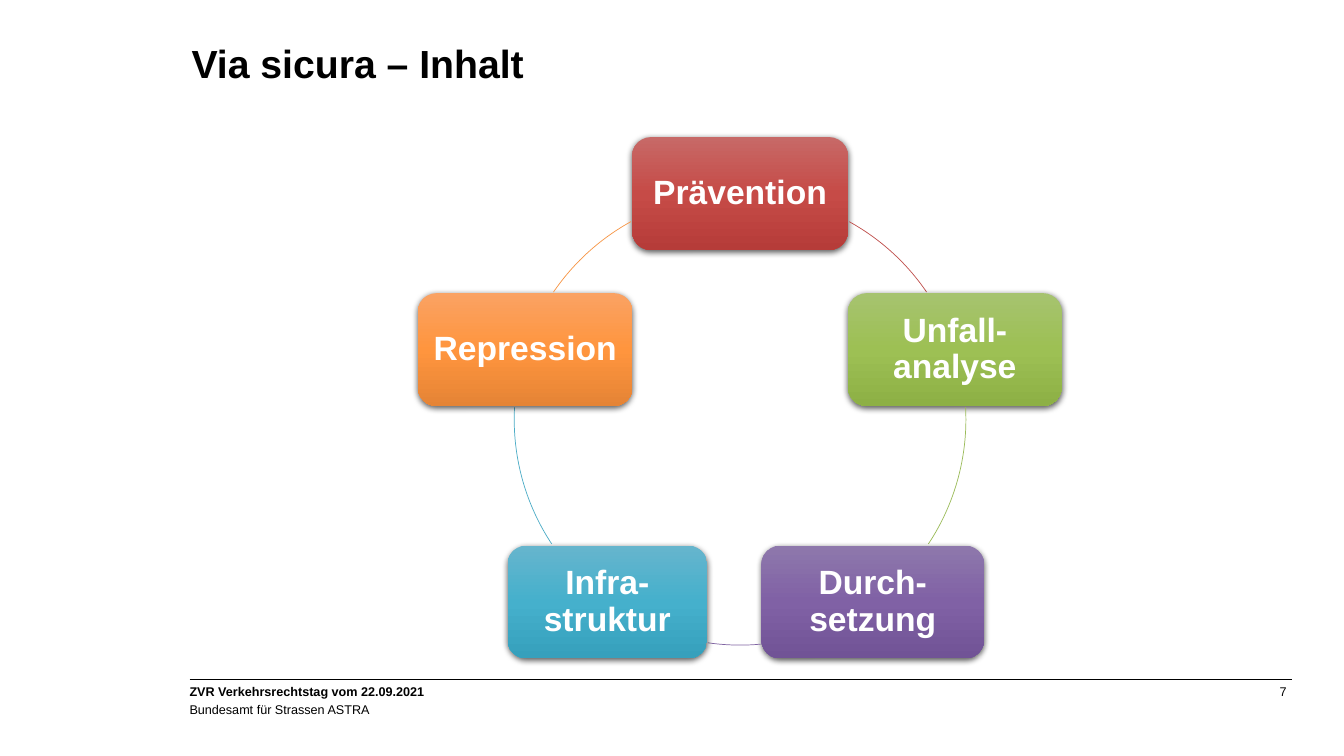
from math import cos, radians, sin

from lxml import etree
from pptx import Presentation
from pptx.dml.color import RGBColor
from pptx.enum.shapes import MSO_CONNECTOR, MSO_SHAPE
from pptx.enum.text import MSO_ANCHOR, PP_ALIGN
from pptx.oxml.ns import qn
from pptx.util import Inches, Pt

ROUNDED, ARC = MSO_SHAPE.ROUNDED_RECTANGLE, MSO_SHAPE.ARC
STRAIGHT = MSO_CONNECTOR.STRAIGHT
TOP, MIDDLE = MSO_ANCHOR.TOP, MSO_ANCHOR.MIDDLE
LEFT, CENTER, RIGHT = PP_ALIGN.LEFT, PP_ALIGN.CENTER, PP_ALIGN.RIGHT

COLORS = {"text": "000000", "label": "FFFFFF", "shadow": "000000"}
FONT = "Arial"

# Ring: centre, radius and height of the boxes, in inches
CENTER_X, CENTER_Y, RADIUS = 7.34, 4.16, 2.24
BOX_HEIGHT = 1.12

# Label, box width, gradient, arc colour, arc start and end (degrees clockwise from the top)
TOPICS = [
    ("Prävention", 2.14, ("C76967", "C64B47", "B63C39"), "C0504D", 28.9, 55.7),
    ("Unfall-analyse", 2.12, ("A6C36F", "9DC054", "8DB045"), "9BBB59", 87, 123.5),
    ("Durch-setzung", 2.21, ("8E78AC", "8061A5", "715396"), "8064A2", 174.8, 188.2),
    ("Infra-struktur", 1.98, ("66B5CD", "45B0CC", "36A0BC"), "4BACC6", 236.5, 273),
    ("Repression", 2.13, ("FAA263", "FF953E", "E58435"), "F79646", 304.3, 331.1),
]


class SlideBuilder:
    def __init__(self, slide, font, colors):
        self.slide = slide
        self.font = font
        self.colors = colors

    def set_text(self, shape, text, size, color, bold, align, anchor, insets):
        frame = shape.text_frame
        frame.word_wrap = True
        frame.vertical_anchor = anchor
        (frame.margin_left, frame.margin_top,
         frame.margin_right, frame.margin_bottom) = map(Inches, insets)
        frame.text = text
        paragraph = frame.paragraphs[0]
        paragraph.alignment = align
        for run in paragraph.runs:
            run.font.name = self.font
            run.font.size = Pt(size)
            run.font.bold = bold
            run.font.color.rgb = RGBColor.from_string(self.colors[color])
        return paragraph

    def text(self, text, left, top, width, height, size, bold=False,
             align=LEFT, anchor=TOP, insets=(0, 0, 0, 0)):
        box = self.slide.shapes.add_textbox(*map(Inches, (left, top, width, height)))
        self.set_text(box, text, size, "text", bold, align, anchor, insets)

    def line(self, left, right, y):
        line = self.slide.shapes.add_connector(
            STRAIGHT, Inches(left), Inches(y), Inches(right), Inches(y))
        line.line.color.rgb = RGBColor.from_string(self.colors["text"])
        line.line.width = Pt(0.75)
        etree.SubElement(line._element.spPr, qn("a:effectLst"))

    def topic_box(self, label, center_x, center_y, width, gradient):
        shape = self.slide.shapes.add_shape(
            ROUNDED, Inches(center_x - width / 2), Inches(center_y - BOX_HEIGHT / 2),
            Inches(width), Inches(BOX_HEIGHT))
        shape.line.fill.background()
        shape.shadow.inherit = False
        shape.fill.gradient()
        shape.fill.gradient_angle = 270
        properties = shape._element.spPr
        # Three gradient stops from top to bottom
        stops = properties.find(".//" + qn("a:gsLst"))
        for stop in list(stops):
            stops.remove(stop)
        for position, color in zip((0, 50000, 100000), gradient):
            stop = etree.SubElement(stops, qn("a:gs"), pos=str(position))
            etree.SubElement(stop, qn("a:srgbClr"), val=color)
        # Soft shadow straight below
        shadow = etree.SubElement(
            properties.find(qn("a:effectLst")), qn("a:outerShdw"),
            blurRad=str(Pt(4.5)), dist=str(Pt(1.5)), dir="5400000", rotWithShape="0")
        color = etree.SubElement(shadow, qn("a:srgbClr"), val=self.colors["shadow"])
        etree.SubElement(color, qn("a:alpha"), val="63000")
        paragraph = self.set_text(shape, label, 24, "label", True, CENTER, MIDDLE,
                                  (0.08, 0.1, 0.08, 0.1))
        paragraph.line_spacing = 0.9

    def ring_arc(self, start, end, color):
        arc = self.slide.shapes.add_shape(
            ARC, Inches(CENTER_X - RADIUS), Inches(CENTER_Y - RADIUS),
            Inches(2 * RADIUS), Inches(2 * RADIUS))
        # Arc angles count from three o'clock, in 0.6 units per degree
        for index, angle in enumerate((start, end)):
            arc.adjustments[index] = (angle - 90) % 360 * 0.6
        arc.fill.background()
        arc.line.color.rgb = RGBColor.from_string(color)
        arc.line.width = Pt(0.5)
        arc.shadow.inherit = False


def main():
    presentation = Presentation()
    presentation.slide_width = Inches(13.33)
    presentation.slide_height = Inches(7.5)
    slide = presentation.slides.add_slide(presentation.slide_layouts[6])
    builder = SlideBuilder(slide, FONT, COLORS)

    # Footer and title
    builder.text("Bundesamt für Strassen ASTRA", 1.88, 6.92, 5.13, 0.23, 9, anchor=MIDDLE)
    builder.line(1.88, 12.81, 6.74)
    builder.text("Via sicura – Inhalt", 1.9, 0.39, 10.87, 1.04, 28, bold=True)
    builder.text("ZVR Verkehrsrechtstag vom 22.09.2021", 1.88, 6.74, 7.94, 0.4, 9,
                 bold=True, insets=(0, 0.05, 0.1, 0.05))
    builder.text("7", 9.75, 6.74, 3.11, 0.52, 9, align=RIGHT,
                 insets=(0.1, 0.05, 0.1, 0.05))

    # Ring of topics, evenly spaced clockwise from the top
    for index, (label, width, gradient, color, start, end) in enumerate(TOPICS):
        angle = radians(index * 360 / len(TOPICS))
        builder.topic_box(label, CENTER_X + RADIUS * sin(angle),
                          CENTER_Y - RADIUS * cos(angle), width, gradient)
        builder.ring_arc(start, end, color)

    presentation.save("out.pptx")


if __name__ == "__main__":
    main()
